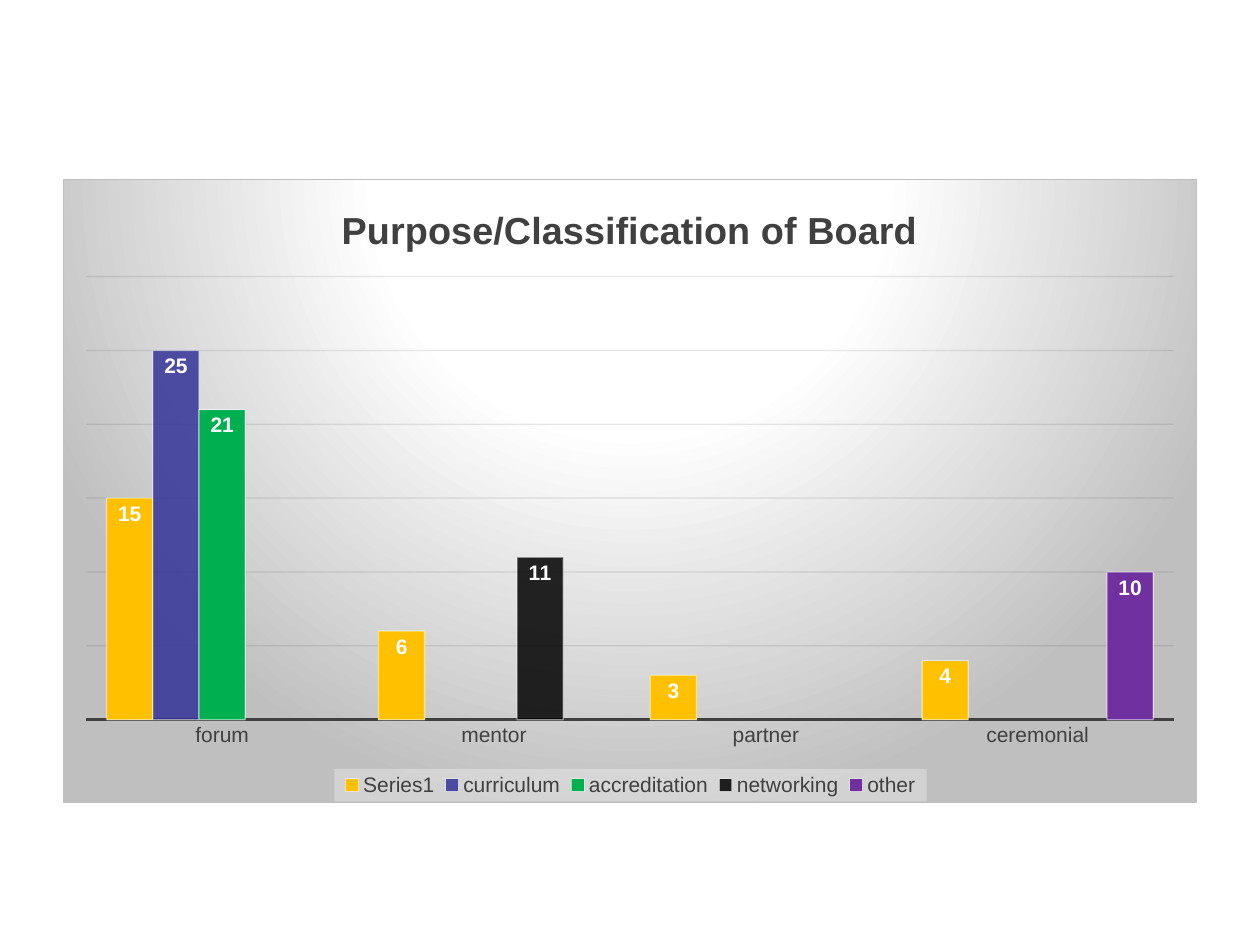
from lxml.etree import SubElement
from pptx import Presentation
from pptx.chart.data import CategoryChartData as ChartData
from pptx.dml.color import RGBColor
from pptx.enum.chart import XL_CHART_TYPE as ChartType
from pptx.enum.chart import XL_LABEL_POSITION as LabelPosition
from pptx.enum.chart import XL_LEGEND_POSITION as LegendPosition
from pptx.enum.chart import XL_TICK_MARK as TickMark
from pptx.oxml import parse_xml
from pptx.oxml.ns import nsdecls, qn
from pptx.util import Inches, Pt

CATEGORIES = ["forum", "mentor", "partner", "ceremonial"]
SERIES = [
    ("Series1", [15, 6, 3, 4], "FFC000", 100),
    ("curriculum", [25, None, None, None], "333399", 85),
    ("accreditation", [21, None, None, None], "00B050", 100),
    ("networking", [None, 11, None, None], "000000", 85),
    ("other", [None, None, None, 10], "7030A0", 100),
]
BACKGROUND = f"""<c:spPr {nsdecls("c", "a")}>
  <a:gradFill><a:gsLst>
    <a:gs pos="0"><a:srgbClr val="FFFFFF"/></a:gs>
    <a:gs pos="39000"><a:srgbClr val="FFFFFF"/></a:gs>
    <a:gs pos="100000"><a:srgbClr val="BFBFBF"/></a:gs>
  </a:gsLst><a:path path="circle">
    <a:fillToRect l="50000" t="-80000" r="50000" b="180000"/>
  </a:path></a:gradFill>
  <a:ln w="9525"><a:solidFill><a:srgbClr val="BFBFBF"/></a:solidFill></a:ln>
</c:spPr>"""
LEGEND_FILL = f"""<c:spPr {nsdecls("c", "a")}><a:solidFill>
  <a:srgbClr val="F2F2F2"><a:alpha val="39000"/></a:srgbClr>
</a:solidFill></c:spPr>"""


def rgb(value):
    return RGBColor.from_string(value)


def set_alpha(color, percent):
    SubElement(color, qn("a:alpha"), val=str(percent * 1000))


def manual_layout(left, top, width, height, inner=False):
    target = '<c:layoutTarget val="inner"/>' if inner else ""
    return parse_xml(f"""<c:layout {nsdecls("c")}><c:manualLayout>{target}
      <c:xMode val="edge"/><c:yMode val="edge"/>
      <c:x val="{left}"/><c:y val="{top}"/><c:w val="{width}"/><c:h val="{height}"/>
    </c:manualLayout></c:layout>""")


class BoardSlide:
    """Holds the style and the current slide, and draws its chart parts."""

    family = "Arial"
    ink = "404040"

    def __init__(self, deck):
        self.page = deck.slides.add_slide(deck.slide_layouts[6])

    def style_font(self, font, size, color, bold=False):
        font.name = self.family
        font.size = Pt(size)
        font.bold = bold
        font.color.rgb = rgb(color)

    def style_line(self, line, color, width):
        line.color.rgb = rgb(color)
        line.width = Pt(width)

    def add_column_chart(self, left, top, width, height):
        data = ChartData()
        data.categories = CATEGORIES
        for name, values, _, _ in SERIES:
            data.add_series(name, values)
        chart = self.page.shapes.add_chart(
            ChartType.COLUMN_CLUSTERED, Inches(left), Inches(top),
            Inches(width), Inches(height), data).chart
        self.style_font(chart.font, 10, "000000")
        space = chart._chartSpace
        space.find(qn("c:txPr")).addprevious(parse_xml(BACKGROUND))
        area = space.find(".//" + qn("c:plotArea"))
        for layout in area.findall(qn("c:layout")):
            area.remove(layout)
        area.insert(0, manual_layout(0.02, 0.156, 0.96, 0.712, inner=True))
        return chart

    def add_title(self, chart, text):
        span = chart.chart_title.text_frame.paragraphs[0].add_run()
        span.text = text
        self.style_font(span.font, 21.6, self.ink, True)
        chart.chart_title.include_in_layout = False

    def style_columns(self, chart):
        plot = chart.plots[0]
        plot.gap_width = 88
        plot.overlap = 0
        plot.vary_by_categories = False
        for series, (_, _, color, opacity) in zip(plot.series, SERIES):
            series.format.fill.solid()
            series.format.fill.fore_color.rgb = rgb(color)
            self.style_line(series.format.line, "FFFFFF", 0.75)
            fill_color, line_color = series._element.spPr.iter(qn("a:srgbClr"))
            if opacity < 100:
                set_alpha(fill_color, opacity)
            set_alpha(line_color, 50)
            labels = series.data_labels
            labels.show_value = True
            labels.position = LabelPosition.INSIDE_END
            self.style_font(labels.font, 12, "FFFFFF", True)

    def style_axes(self, chart):
        names = chart.category_axis
        names.major_tick_mark = TickMark.NONE
        self.style_font(names.tick_labels.font, 12, self.ink)
        self.style_line(names.format.line, self.ink, 1.5)
        values = chart.value_axis
        values.minimum_scale, values.maximum_scale, values.major_unit = 0, 30, 5
        values.visible = False
        values.has_major_gridlines = True
        self.style_line(values.major_gridlines.format.line, "0D0D0D", 0.75)
        grid = chart._chartSpace.find(".//" + qn("c:majorGridlines"))
        for color in grid.iter(qn("a:srgbClr")):
            set_alpha(color, 10)

    def add_legend(self, chart):
        chart.has_legend = True
        legend = chart.legend
        legend.position = LegendPosition.BOTTOM
        legend.include_in_layout = False
        self.style_font(legend.font, 12, self.ink)
        element = legend._element
        for layout in element.findall(qn("c:layout")):
            element.remove(layout)
        element.find(qn("c:legendPos")).addnext(manual_layout(0.239, 0.947, 0.523, 0.052))
        element.find(qn("c:txPr")).addprevious(parse_xml(LEGEND_FILL))


def main():
    deck = Presentation()
    deck.slide_width, deck.slide_height = Inches(10), Inches(7.5)
    slide = BoardSlide(deck)
    chart = slide.add_column_chart(0.5, 1.42, 9, 4.95)
    slide.add_title(chart, "Purpose/Classification of Board")
    slide.style_columns(chart)
    slide.style_axes(chart)
    slide.add_legend(chart)
    deck.save("out.pptx")


if __name__ == "__main__":
    main()
